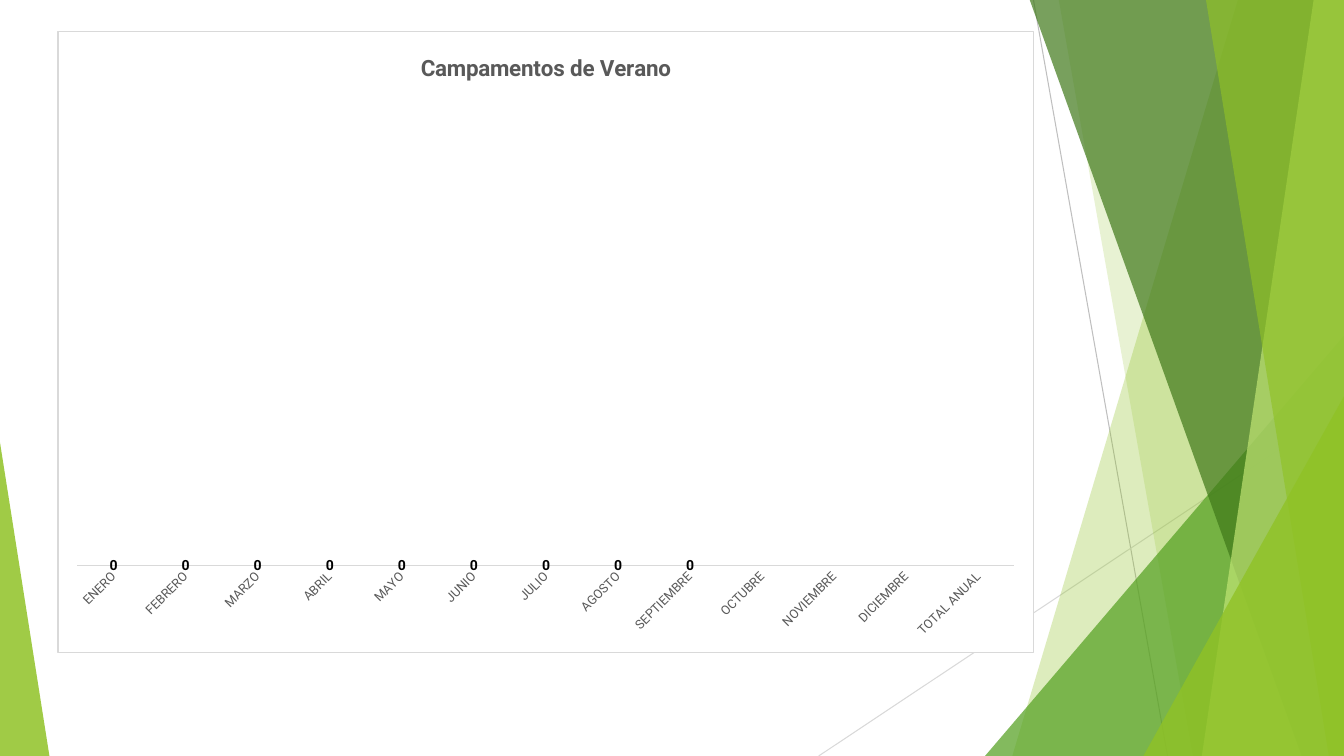
from lxml import etree
from pptx import Presentation
from pptx import util as u
from pptx.chart.data import CategoryChartData
from pptx.dml.color import RGBColor
from pptx.enum import chart as ch, shapes
from pptx.oxml import parse_xml
from pptx.oxml.ns import nsdecls, qn

PX = 9144  # 100 px to the inch
WIDTH, HEIGHT = 1333, 750
FONT = "Roboto"
COLORS = {
    "white": "FFFFFF", "black": "000000", "gray": "595959",
    "rule": "D9D9D9", "rule_dark": "BFBFBF",
    "lime": "90C226", "pale_lime": "C0E474", "green": "54A021", "dark_green": "3F7819",
    "gold_dark": "C29600", "gold": "FCC300", "gold_light": "FDC400",
}
MONTHS = ["ENERO", "FEBRERO", "MARZO", "ABRIL", "MAYO", "JUNIO", "JULIO", "AGOSTO",
          "SEPTIEMBRE", "OCTUBRE", "NOVIEMBRE", "DICIEMBRE", "TOTAL ANUAL"]


def color(name):
    return RGBColor.from_string(COLORS[name])


class SlideBuilder:
    def __init__(self, slide):
        self.slide = slide

    def line(self, x1, y1, x2, y2, name):
        connector = self.slide.shapes.add_connector(
            shapes.MSO_CONNECTOR.STRAIGHT, *(v * PX for v in (x1, y1, x2, y2)))
        connector.line.color.rgb = color(name)
        connector.line.width = u.Pt(0.75)
        etree.SubElement(connector._element.spPr, qn("a:effectLst"))

    def paint(self, shape, name, opacity):
        shape.shadow.inherit = False
        shape.line.fill.background()
        shape.fill.solid()
        shape.fill.fore_color.rgb = color(name)
        solid = shape._element.spPr.find(qn("a:solidFill"))
        etree.SubElement(solid[0], qn("a:alpha"), val=str(opacity * 1000))

    def band(self, top_x, bottom_x, name, opacity):
        """Fill from a slanted left edge to the right side of the slide."""
        builder = self.slide.shapes.build_freeform(top_x, -1, scale=PX)
        builder.add_line_segments([(WIDTH, -1), (WIDTH, HEIGHT), (bottom_x, HEIGHT)])
        self.paint(builder.convert_to_shape(), name, opacity)

    def triangle(self, x, y, width, apex, name, opacity):
        """Triangle standing on the bottom edge; apex runs from 0 (left) to 1 (right)."""
        shape = self.slide.shapes.add_shape(
            shapes.MSO_SHAPE.ISOSCELES_TRIANGLE,
            x * PX, y * PX, width * PX, (HEIGHT - y) * PX)
        shape.adjustments[0] = apex
        self.paint(shape, name, opacity)

    def style_font(self, font, size, name, bold=False):
        font.name, font.size, font.bold = FONT, u.Pt(size), bold
        font.color.rgb = color(name)

    def column_chart(self, x, y, width, height, title, categories, values):
        data = CategoryChartData()
        data.categories = categories
        data.add_series("Series 1", values)
        chart = self.slide.shapes.add_chart(
            ch.XL_CHART_TYPE.COLUMN_STACKED,
            x * PX, y * PX, width * PX, height * PX, data).chart
        self.style_font(chart.font, 10, "black")
        chart.has_legend = False
        chart.has_title = True
        heading = chart.chart_title.text_frame
        heading.text = title
        self.style_font(heading.paragraphs[0].runs[0].font, 16, "gray", True)

        plot = chart.plots[0]
        plot.overlap = 100
        plot.vary_by_categories = False
        plot.has_data_labels = True
        plot.data_labels.show_value = True
        self.style_font(plot.data_labels.font, 10, "black", True)
        self.gradient(plot.series[0], [(0, "gold_dark"), (80, "gold"), (100, "gold_light")])

        value_axis, category_axis = chart.value_axis, chart.category_axis
        value_axis.visible = False
        value_axis.has_major_gridlines = False
        value_axis.minimum_scale, value_axis.maximum_scale = 0, 1
        category_axis.major_tick_mark = ch.XL_TICK_MARK.NONE
        category_axis.format.line.color.rgb = color("rule")
        category_axis.format.line.width = u.Pt(1)
        self.style_font(category_axis.tick_labels.font, 9, "gray")
        body = category_axis._element.find(qn("c:txPr")).find(qn("a:bodyPr"))
        body.set("rot", "-2700000")
        body.set("vert", "horz")
        self.frame(chart)
        self.place_plot(chart, x=0.02, y=0.13, w=0.96, h=0.73)

    def gradient(self, series, stops):
        series.format.fill.gradient()
        series.format.fill.gradient_angle = 90
        stop_list = series._element.spPr.find(qn("a:gradFill")).find(qn("a:gsLst"))
        for stop in list(stop_list):
            stop_list.remove(stop)
        for position, name in stops:
            stop = etree.SubElement(stop_list, qn("a:gs"), pos=str(position * 1000))
            etree.SubElement(stop, qn("a:srgbClr"), val=COLORS[name])

    def frame(self, chart):
        """Give the chart area a white fill and a thin border."""
        chart._chartSpace.find(qn("c:chart")).addnext(parse_xml(
            f'<c:spPr {nsdecls("c", "a")}>'
            f'<a:solidFill><a:srgbClr val="{COLORS["white"]}"/></a:solidFill>'
            f'<a:ln w="{u.Pt(0.75)}"><a:solidFill><a:srgbClr val="{COLORS["rule"]}"/>'
            '</a:solidFill></a:ln></c:spPr>'))

    def place_plot(self, chart, **fractions):
        area = chart._chartSpace.find(qn("c:chart")).find(qn("c:plotArea"))
        for layout in area.findall(qn("c:layout")):
            area.remove(layout)
        layout = etree.Element(qn("c:layout"))
        manual = etree.SubElement(layout, qn("c:manualLayout"))
        etree.SubElement(manual, qn("c:layoutTarget"), val="inner")
        for key in "xy":
            etree.SubElement(manual, qn(f"c:{key}Mode"), val="edge")
        for key, fraction in fractions.items():
            etree.SubElement(manual, qn(f"c:{key}"), val=str(fraction))
        area.insert(0, layout)


def main():
    presentation = Presentation()
    presentation.slide_width, presentation.slide_height = WIDTH * PX, HEIGHT * PX
    builder = SlideBuilder(presentation.slides.add_slide(presentation.slide_layouts[6]))

    builder.line(1025, 0, 1158, HEIGHT, "rule_dark")
    builder.line(WIDTH, 403, 812, HEIGHT, "rule")
    builder.band(1228, 1004, "lime", 30)
    builder.band(1050, 1183, "lime", 20)
    builder.triangle(977, 333, 356, 1, "green", 72)
    builder.band(1021, 1291, "dark_green", 70)
    builder.band(1303, 1192, "pale_lime", 70)
    builder.band(1196, 1318, "lime", 65)
    builder.triangle(1134, 393, 199, 1, "lime", 80)
    builder.triangle(0, 439, 49, 0, "lime", 85)
    builder.column_chart(57, 31, 969, 617, "Campamentos de Verano",
                         MONTHS, [0] * 9 + [None] * 4)
    presentation.save("out.pptx")


if __name__ == "__main__":
    main()
